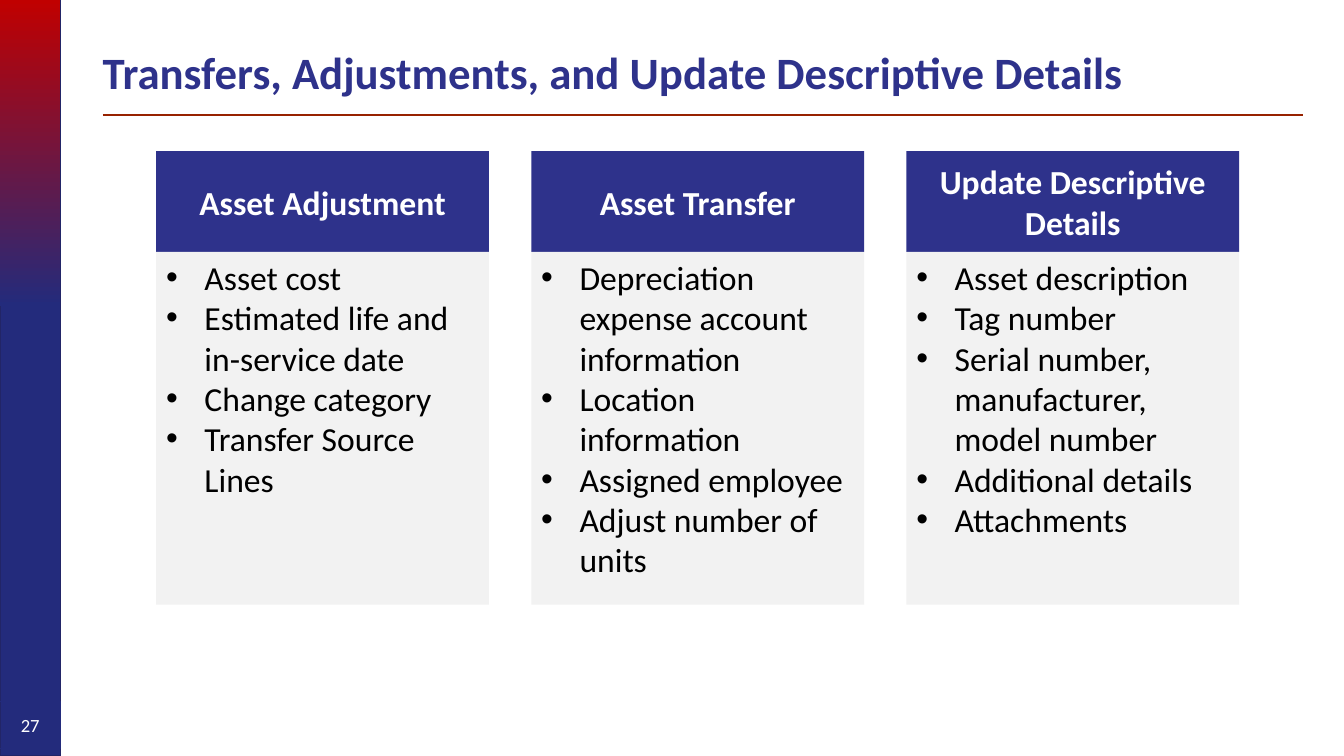
from lxml import etree
from pptx import Presentation, util as u
from pptx.dml.color import RGBColor
from pptx.enum import shapes, text
from pptx.oxml.ns import qn

C = {"navy": "232B7C", "edge": "222567", "red": "C00000", "rule": "972200",
     "indigo": "2E328B", "panel": "F2F2F2", "white": "FFFFFF", "black": "000000"}
LEFT, TOP, COL_W, PITCH, HEAD_H, BODY_H = 1.55, 1.5, 3.3, 3.72, 1, 3.5
BAR_W, INDENT = 0.6, 0.38
COLUMNS = [
    ("Asset Adjustment",
     ["Asset cost", "Estimated life and in-service date", "Change category",
      "Transfer Source Lines"]),
    ("Asset Transfer",
     ["Depreciation expense account information", "Location information",
      "Assigned employee", "Adjust number of units"]),
    ("Update Descriptive Details",
     ["Asset description", "Tag number", "Serial number, manufacturer, model number",
      "Additional details", "Attachments"]),
]


def rect(x, y, w, h, fill=None, line=None, width=1):
    sp = s.shapes.add_shape(shapes.MSO_SHAPE.RECTANGLE, *map(u.Inches, (x, y, w, h)))
    sp.shadow.inherit = False
    if fill:
        sp.fill.solid()
        sp.fill.fore_color.rgb = RGBColor.from_string(C[fill])
    else:
        sp.fill.background()
    if line:
        sp.line.color.rgb = RGBColor.from_string(C[line])
        sp.line.width = u.Pt(width)
    else:
        sp.line.fill.background()
    return sp


def write(sp, lines, size=24, color="black", bold=False, align="LEFT",
          anchor="MIDDLE", bullet=False, spacing=None):
    tf = sp.text_frame
    tf.word_wrap = True
    tf.vertical_anchor = text.MSO_ANCHOR[anchor]
    for i, line in enumerate(lines):
        p = tf.paragraphs[0] if i == 0 else tf.add_paragraph()
        p.alignment = text.PP_ALIGN[align]
        p.line_spacing = spacing
        if bullet:
            pPr = p._p.get_or_add_pPr()
            pPr.set("marL", str(u.Inches(INDENT)))
            pPr.set("indent", str(-u.Inches(INDENT)))
            etree.SubElement(pPr, qn("a:buFont"), typeface="Arial")
            etree.SubElement(pPr, qn("a:buChar"), char="•")
        r = p.add_run()
        r.text = line
        r.font.name, r.font.size, r.font.bold = "Calibri", u.Pt(size), bold
        r.font.color.rgb = RGBColor.from_string(C[color])


prs = Presentation()
prs.slide_width, prs.slide_height = u.Inches(13.33), u.Inches(7.5)
s = prs.slides.add_slide(prs.slide_layouts[6])

# Side bar
rect(0, 0, BAR_W, 7.5, "navy", "edge")
fade = rect(0, 0, BAR_W, 3.04)
fade.fill.gradient()
fade.fill.gradient_angle = 270
for stop, name, pos in zip(fade.fill.gradient_stops, ("red", "navy"), (0, 1)):
    stop.color.rgb = RGBColor.from_string(C[name])
    stop.position = pos

# Title and rule
rule = s.shapes.add_connector(shapes.MSO_CONNECTOR.STRAIGHT,
                              *map(u.Inches, (1.02, 1.14, 12.92, 1.14)))
rule.line.color.rgb = RGBColor.from_string(C["rule"])
rule.line.width = u.Pt(1.5)
etree.SubElement(rule._element.spPr, qn("a:effectLst"))
title = s.shapes.add_textbox(*map(u.Inches, (0.92, 0.4, 12, 0.69)))
write(title, ["Transfers, Adjustments, and Update Descriptive Details"],
      size=32, color="indigo", bold=True, spacing=0.9)

# Columns
for i, (heading, items) in enumerate(COLUMNS):
    x = LEFT + i * PITCH
    write(rect(x, TOP, COL_W, HEAD_H, "indigo"), [heading],
          color="white", bold=True, align="CENTER")
    write(rect(x, TOP + HEAD_H, COL_W, BODY_H, "panel"), items,
          anchor="TOP", bullet=True)

# Page number
write(rect(0, 6.96, BAR_W, 0.47, line="navy", width=0.75), ["27"],
      size=13.3, color="white", align="CENTER")

prs.save("out.pptx")
